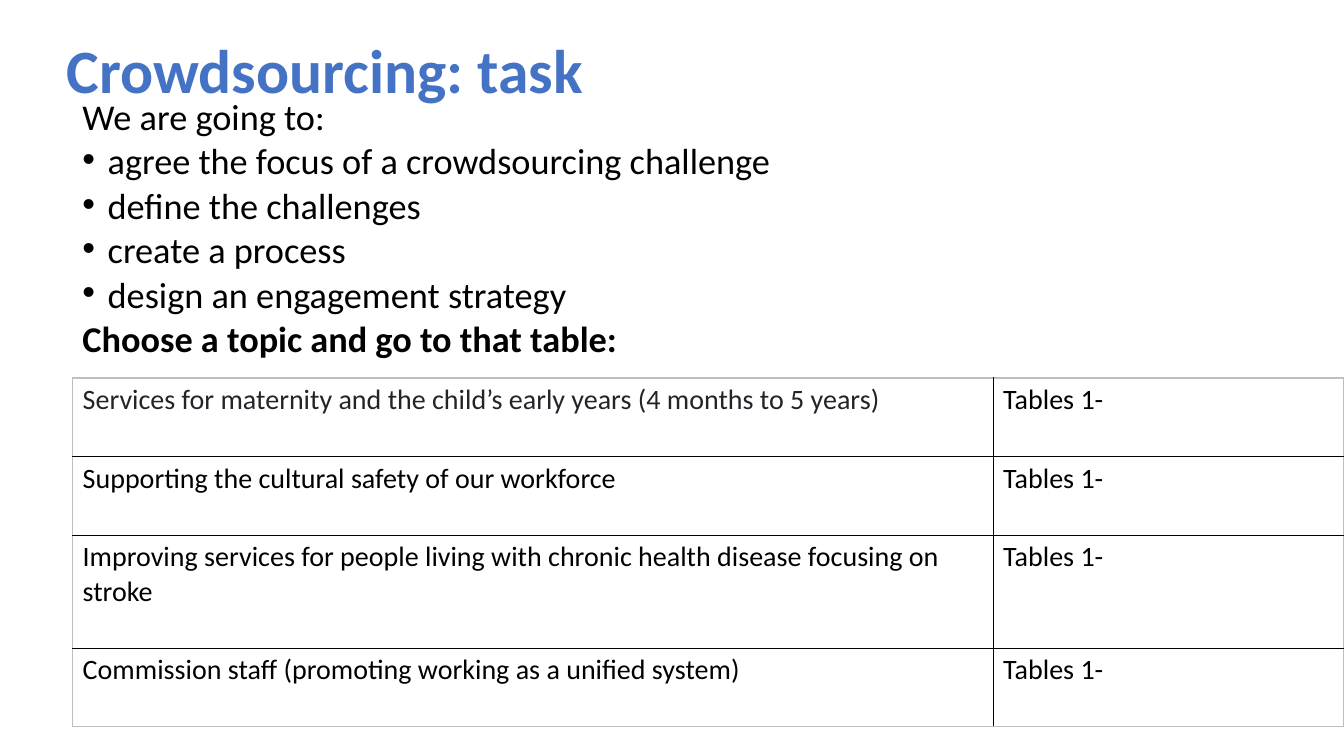
from dataclasses import dataclass

from lxml import etree
from pptx import Presentation
from pptx.dml.color import RGBColor
from pptx.enum import text as t
from pptx.oxml import ns
from pptx.util import Inches, Pt

BLUE = RGBColor(0x44, 0x72, 0xC4)
BLACK = RGBColor(0, 0, 0)
DARK = RGBColor(0x21, 0x25, 0x29)
GREY = RGBColor(0xBF, 0xBF, 0xBF)


@dataclass
class Line:
    text: str
    bullet: bool = False
    bold: bool = False


@dataclass
class Topic:
    name: str
    height: float = 0.78
    color: RGBColor = BLACK
    seat: str = "Tables 1-"


LINES = [
    Line("We are going to:"),
    Line("agree the focus of a crowdsourcing challenge", bullet=True),
    Line("define the challenges", bullet=True),
    Line("create a process", bullet=True),
    Line("design an engagement strategy", bullet=True),
    Line("Choose a topic and go to that table:", bold=True),
]
TOPICS = [
    Topic("Services for maternity and the child’s early years (4 months to 5 years)", color=DARK),
    Topic("Supporting the cultural safety of our workforce"),
    Topic("Improving services for people living with chronic health disease focusing on stroke", 1.12),
    Topic("Commission staff (promoting working as a unified system)"),
]
WIDTHS = [9.13, 3.48]


def style(para, size: float, color: RGBColor, bold: bool = False) -> None:
    for key, val in {"name": "Calibri", "size": Pt(size), "bold": bold}.items():
        setattr(para.font, key, val)
    para.font.color.rgb = color


def place(shape, left: float, top: float, width: float, height: float) -> None:
    box = {"left": left, "top": top, "width": width, "height": height}
    for key, val in box.items():
        setattr(shape, key, Inches(val))


def mark(para) -> None:
    props = para._p.get_or_add_pPr()
    props.set("marL", str(Inches(0.25)))
    props.set("indent", str(-Inches(0.25)))
    etree.SubElement(props, ns.qn("a:buFont"), typeface="Arial")
    etree.SubElement(props, ns.qn("a:buChar"), char="•")


def border(cell, sides: dict[str, RGBColor]) -> None:
    props = cell._tc.get_or_add_tcPr()
    for spot, (side, color) in enumerate(sides.items()):
        line = etree.Element(ns.qn(f"a:{side}"), w=str(Pt(1)))
        fill = etree.SubElement(line, ns.qn("a:solidFill"))
        etree.SubElement(fill, ns.qn("a:srgbClr"), val=str(color))
        props.insert(spot, line)


def add_lines(slide) -> None:
    box = slide.shapes.add_textbox(0, 0, 0, 0)
    place(box, 0.72, 1, 11.5, 2.75)
    frame = box.text_frame
    frame.word_wrap = True
    for i, line in enumerate(LINES):
        para = frame.add_paragraph() if i else frame.paragraphs[0]
        para.text = line.text
        para.line_spacing = 0.7
        if i:
            para.space_before = Pt(10)
        if line.bullet:
            mark(para)
        style(para, 25.9, BLACK, line.bold)


def add_topics(slide) -> None:
    high = sum(topic.height for topic in TOPICS)
    grid = slide.shapes.add_table(
        len(TOPICS), len(WIDTHS), Inches(0.72), Inches(3.75),
        Inches(sum(WIDTHS)), Inches(high)).table
    grid.first_row = grid.horz_banding = False
    for col, width in zip(grid.columns, WIDTHS):
        col.width = Inches(width)
    for r, topic in enumerate(TOPICS):
        grid.rows[r].height = Inches(topic.height)
        for c, (words, color) in enumerate([(topic.name, topic.color), (topic.seat, BLACK)]):
            cell = grid.cell(r, c)
            cell.text = words
            cell.fill.background()
            style(cell.text_frame.paragraphs[0], 20, color)
            # Grey outside, black between cells
            border(cell, {
                "lnL": BLACK if c else GREY,
                "lnR": GREY if c == len(WIDTHS) - 1 else BLACK,
                "lnT": BLACK if r else GREY,
                "lnB": GREY if r == len(TOPICS) - 1 else BLACK,
            })


def main() -> None:
    deck = Presentation()
    deck.slide_width, deck.slide_height = Inches(13.33), Inches(7.5)
    slide = deck.slides.add_slide(deck.slide_layouts[5])

    # Title
    title = slide.shapes.title
    place(title, 0.56, 0, 11.5, 1.45)
    title.text_frame.text = "Crowdsourcing: task"
    title.text_frame.vertical_anchor = t.MSO_ANCHOR.MIDDLE
    head = title.text_frame.paragraphs[0]
    head.alignment = t.PP_ALIGN.LEFT
    head.line_spacing = 0.9
    style(head, 44, BLUE, True)

    # Plan and topic table
    add_lines(slide)
    add_topics(slide)
    deck.save("out.pptx")


if __name__ == "__main__":
    main()
